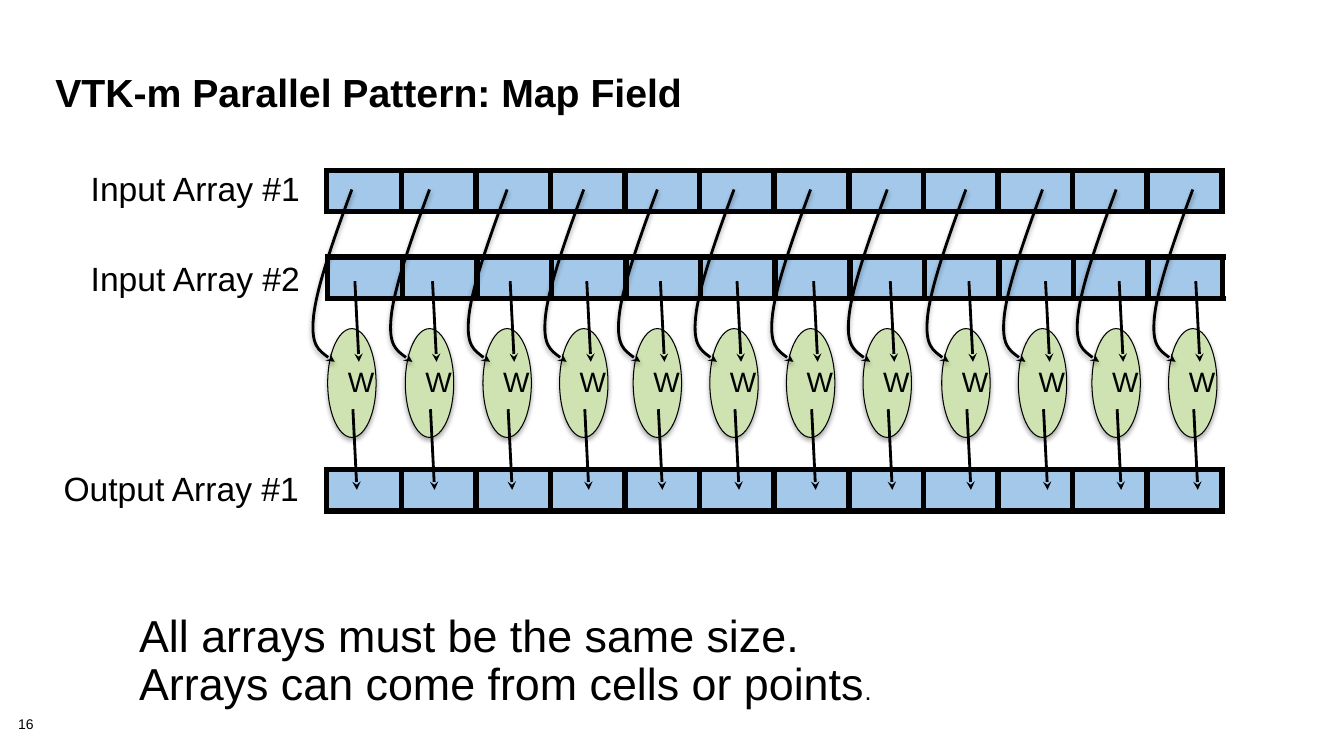
from lxml import etree
from pptx import Presentation
from pptx.dml.color import RGBColor
from pptx.enum.shapes import MSO_CONNECTOR, MSO_SHAPE
from pptx.enum.text import MSO_ANCHOR, MSO_AUTO_SIZE, PP_ALIGN
from pptx.oxml import parse_xml
from pptx.oxml.ns import nsdecls, qn
from pptx.util import Pt

OVAL, LINE = MSO_SHAPE.OVAL, MSO_CONNECTOR.STRAIGHT
TOP, MID = MSO_ANCHOR.TOP, MSO_ANCHOR.MIDDLE
LEFT, MIDDLE = PP_ALIGN.LEFT, PP_ALIGN.CENTER
GROW, FIXED = MSO_AUTO_SIZE.SHAPE_TO_FIT_TEXT, MSO_AUTO_SIZE.NONE
PX = 9144  # 100 px to the inch

# Content: places are left, top, width, height in px
TITLE = ("VTK-m Parallel Pattern: Map Field", (45, 65, 1242, 84))
NUMBER = ("16", (18, 712, 56, 16))
LABELS = [
    ("Input Array #1", (77, 161, 236, 57)),
    ("Input Array #2", (77, 250, 236, 57)),
    ("Output Array #1", (50, 458, 262, 57)),
]
ARRAYS = [(324, 169), (325, 255), (324, 466)]
CELLS, CELL_W, CELL_H = 12, 74, 41
WORKER = "W"
WORKERS = [325, 402, 479, 555, 628, 704, 780, 856, 934, 1010, 1083, 1159]
OVAL_Y, OVAL_W, OVAL_H = 326, 48, 108
# Arrows: x counts from the left of the worker
STRAIGHT = [((27, 279), (31, 359)), ((25, 406), (29, 486))]
BEND_START = (24, 188)
BEND = [
    ((6, 237), (-11, 285), (-14, 314)),
    ((-17, 343), (-5, 351), (7, 359)),
]
NOTE = (
    "All arrays must be the same size.\nArrays can come from cells or points.",
    (125, 598, 758, 117),
)

THEME = {
    "font": "Arial", "ink": "000000", "cell": "A3C8EA", "worker": "CEE3B1",
    "title": 28, "label": 24, "letter": 20, "note": 32, "stop": 18,
    "number": 10, "border": 4.5, "arrow": 2, "edge": 0.75,
}

deck = Presentation()
deck.slide_width, deck.slide_height = 1333 * PX, 750 * PX
slide = deck.slides.add_slide(deck.slide_layouts[6])
shapes = slide.shapes


def color(name):
    return RGBColor.from_string(THEME[name])


def write(shape, text, size, pad, spacing=0.9, bold=False, anchor=MID,
          align=LEFT, wrap=True):
    frame = shape.text_frame
    frame.text = text
    frame.word_wrap = wrap
    frame.vertical_anchor = anchor
    frame.margin_left = frame.margin_right = pad[0] * PX
    frame.margin_top = frame.margin_bottom = pad[1] * PX
    for para in frame.paragraphs:
        para.alignment = align
        para.line_spacing = spacing
        for run in para.runs:
            font = run.font
            font.name, font.size, font.bold = THEME["font"], Pt(THEME[size]), bold
            font.color.rgb = color("ink")
    return frame


def add_text(item, size, pad, fit=FIXED, **style):
    text, place = item
    box = shapes.add_textbox(*(n * PX for n in place))
    frame = write(box, text, size, pad, **style)
    frame.auto_size = fit
    return frame


def add_shadow(shape):
    shape.shadow.inherit = False
    effects = shape._element.spPr.find(qn("a:effectLst"))
    effects.append(parse_xml(
        f'<a:outerShdw {nsdecls("a")} blurRad="44450" dist="27940" '
        'dir="5400000" rotWithShape="0"><a:srgbClr val="000000">'
        '<a:alpha val="32000"/></a:srgbClr></a:outerShdw>'))


def style_arrow(shape):
    shape.line.color.rgb = color("ink")
    shape.line.width = Pt(THEME["arrow"])
    line = shape.line._get_or_add_ln()
    etree.SubElement(line, qn("a:tailEnd"), type="stealth")


def add_array(x, y):
    table = shapes.add_table(1, CELLS, x * PX, y * PX,
                             CELLS * CELL_W * PX, CELL_H * PX).table
    for col in table.columns:
        col.width = CELL_W * PX
    for cell in table.iter_cells():
        cell.margin_top = cell.margin_bottom = 0
        props = cell._tc.get_or_add_tcPr()
        for side in "LRTB":
            props.append(parse_xml(
                f'<a:ln{side} {nsdecls("a")} w="{Pt(THEME["border"])}">'
                f'<a:solidFill><a:srgbClr val="{THEME["ink"]}"/></a:solidFill>'
                f'</a:ln{side}>'))
        cell.fill.solid()
        cell.fill.fore_color.rgb = color("cell")


def add_worker(x):
    oval = shapes.add_shape(OVAL, x * PX, OVAL_Y * PX, OVAL_W * PX, OVAL_H * PX)
    oval.fill.solid()
    oval.fill.fore_color.rgb = color("worker")
    oval.line.color.rgb = color("ink")
    oval.line.width = Pt(THEME["edge"])
    add_shadow(oval)
    write(oval, WORKER, "letter", (13, 7), align=MIDDLE)


def add_straight(x, start, end):
    arrow = shapes.add_connector(LINE, (x + start[0]) * PX, start[1] * PX,
                                 (x + end[0]) * PX, end[1] * PX)
    style_arrow(arrow)
    etree.SubElement(arrow._element.spPr, qn("a:effectLst"))


def add_bend(x):
    ends = [curve[-1] for curve in BEND]
    pen = shapes.build_freeform(x + BEND_START[0], BEND_START[1], scale=PX)
    pen.add_line_segments([(x + dx, y) for dx, y in ends], close=False)
    bend = pen.convert_to_shape()
    # Turn each segment into a cubic curve
    left = min(dx for dx, _ in ends)
    steps = list(bend._element.spPr.iter(qn("a:lnTo")))
    for step, curve in zip(steps, BEND):
        cubic = etree.Element(qn("a:cubicBezTo"))
        for dx, y in curve:
            etree.SubElement(cubic, qn("a:pt"), x=str(dx - left),
                             y=str(y - BEND_START[1]))
        step.getparent().replace(step, cubic)
    bend.fill.background()
    style_arrow(bend)
    add_shadow(bend)


# Title and slide number
add_text(NUMBER, "number", (0, 0), anchor=TOP)
add_text(TITLE, "title", (10, 10), spacing=0.85, bold=True, anchor=TOP)

# Arrays and their labels
for spot in ARRAYS:
    add_array(*spot)
for label in LABELS:
    add_text(label, "label", (13, 10), fit=GROW, wrap=False)

# Workers with their arrows
for x in WORKERS:
    add_worker(x)
    add_bend(x)
    for start, end in STRAIGHT:
        add_straight(x, start, end)

# Closing note, with a smaller full stop
note = add_text(NOTE, "note", (13, 10), fit=GROW, wrap=False)
last = note.paragraphs[-1]
run = last.runs[0]
run.text = run.text[:-1]
stop = last.add_run()
stop.text = "."
stop.font.name, stop.font.size = THEME["font"], Pt(THEME["stop"])
stop.font.color.rgb = color("ink")

deck.save("out.pptx")
